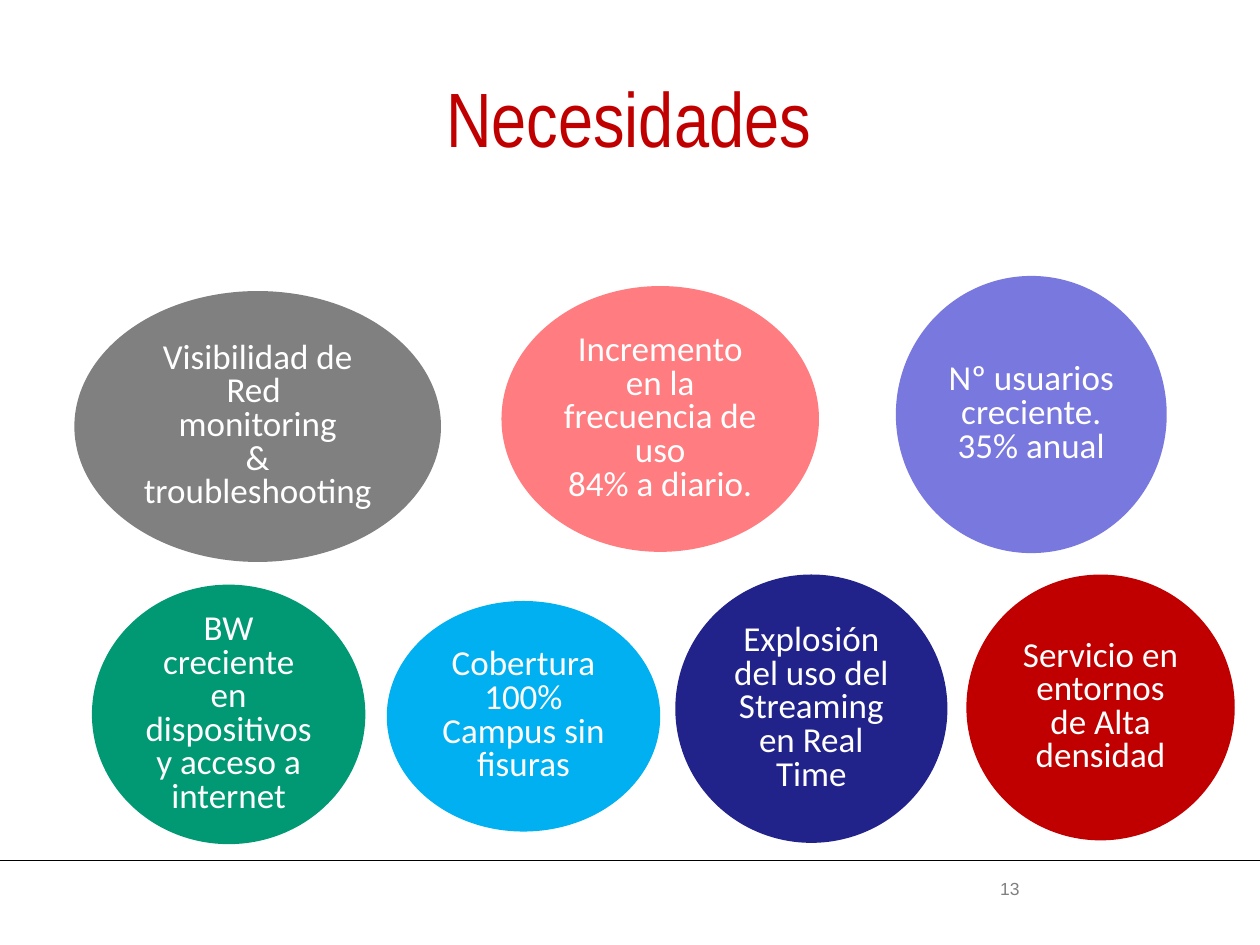
from pptx import Presentation
from pptx.dml.color import RGBColor
from pptx.enum.shapes import MSO_CONNECTOR, MSO_SHAPE
from pptx.enum.text import MSO_ANCHOR, MSO_AUTO_SIZE, PP_ALIGN
from pptx.oxml.ns import qn
from pptx.util import Inches, Pt
from lxml import etree

ELLIPSE = MSO_SHAPE.OVAL
STRAIGHT = MSO_CONNECTOR.STRAIGHT
LEFT, CENTER = PP_ALIGN.LEFT, PP_ALIGN.CENTER
TOP, MIDDLE = MSO_ANCHOR.TOP, MSO_ANCHOR.MIDDLE
TITLE_ONLY = 5

COLORS = {
    "black": "000000", "white": "FFFFFF", "gray": "808080",
    "pink": "FF7C80", "lilac": "7878DE", "green": "009973",
    "sky": "00B0F0", "navy": "22228B", "red": "C00000",
}

FORMATS = {
    "title": {"name": "Arial Narrow", "size": Pt(44), "bold": False},
    "need": {"name": "Calibri", "size": Pt(20)},
    "number": {"name": "Arial", "size": Pt(10)},
}

# Box (left, top, width, height), fill and text; \v breaks a line, \n a paragraph
NEEDS = [
    ((3.07, 4.77, 2.17, 1.83), "sky", "Cobertura 100% Campus sin fisuras"),
    ((3.98, 2.27, 2.52, 2.11), "pink",
     "Incremento en la frecuencia de uso\v84% a diario."),
    ((7.11, 2.19, 2.15, 2.20), "lilac", "Nº usuarios creciente.\n35% anual"),
    ((7.67, 4.56, 2.13, 2.11), "red", "Servicio en entornos de Alta densidad"),
    ((0.73, 4.64, 2.17, 2.06), "green",
     "BW creciente en dispositivos y acceso a internet"),
    ((5.36, 4.56, 2.16, 2.13), "navy",
     "Explosión del uso del Streaming en Real Time"),
    ((0.59, 2.31, 2.91, 2.15), "gray",
     "Visibilidad de Red \vmonitoring\v&\ntroubleshooting"),
]


def rgb(name):
    return RGBColor.from_string(COLORS[name])


def write_text(shape, text, style, color, alignment, anchor, spacing=1.0):
    frame = shape.text_frame
    frame.word_wrap = True
    frame.vertical_anchor = anchor
    frame.text = text
    for paragraph in frame.paragraphs:
        paragraph.alignment = alignment
        paragraph.line_spacing = spacing
        for run in paragraph.runs:
            for attribute, value in FORMATS[style].items():
                setattr(run.font, attribute, value)
            run.font.color.rgb = rgb(color)


def place_title(slide, box, text):
    title = slide.shapes.title
    title.left, title.top, title.width, title.height = map(Inches, box)
    write_text(title, text, "title", "red", LEFT, TOP, 0.8)
    title.text_frame.auto_size = MSO_AUTO_SIZE.SHAPE_TO_FIT_TEXT


def add_need(slide, box, fill, text):
    ellipse = slide.shapes.add_shape(ELLIPSE, *map(Inches, box))
    ellipse.shadow.inherit = False
    ellipse.fill.solid()
    ellipse.fill.fore_color.rgb = rgb(fill)
    ellipse.line.fill.background()
    write_text(ellipse, text, "need", "white", CENTER, MIDDLE, 0.8)


def add_footer(slide, line_top, number_box, number):
    line = slide.shapes.add_connector(
        STRAIGHT, Inches(0), Inches(line_top), Inches(10), Inches(line_top))
    line.line.color.rgb = rgb("black")
    line.line.width = Pt(0.75)
    etree.SubElement(line._element.spPr, qn("a:effectLst"))
    number_shape = slide.shapes.add_textbox(*map(Inches, number_box))
    write_text(number_shape, number, "number", "gray", CENTER, TOP)


def main():
    presentation = Presentation()
    presentation.slide_width = Inches(10)
    presentation.slide_height = Inches(7.5)
    slide = presentation.slides.add_slide(presentation.slide_layouts[TITLE_ONLY])

    # Footer rule and page number
    add_footer(slide, 6.83, (7.68, 6.92, 0.67, 0.33), "13")
    # Needs
    for box, fill, text in NEEDS:
        add_need(slide, box, fill, text)
    # Title
    place_title(slide, (3.44, 0.65, 3.14, 0.69), "Necesidades")

    presentation.save("out.pptx")


if __name__ == "__main__":
    main()
